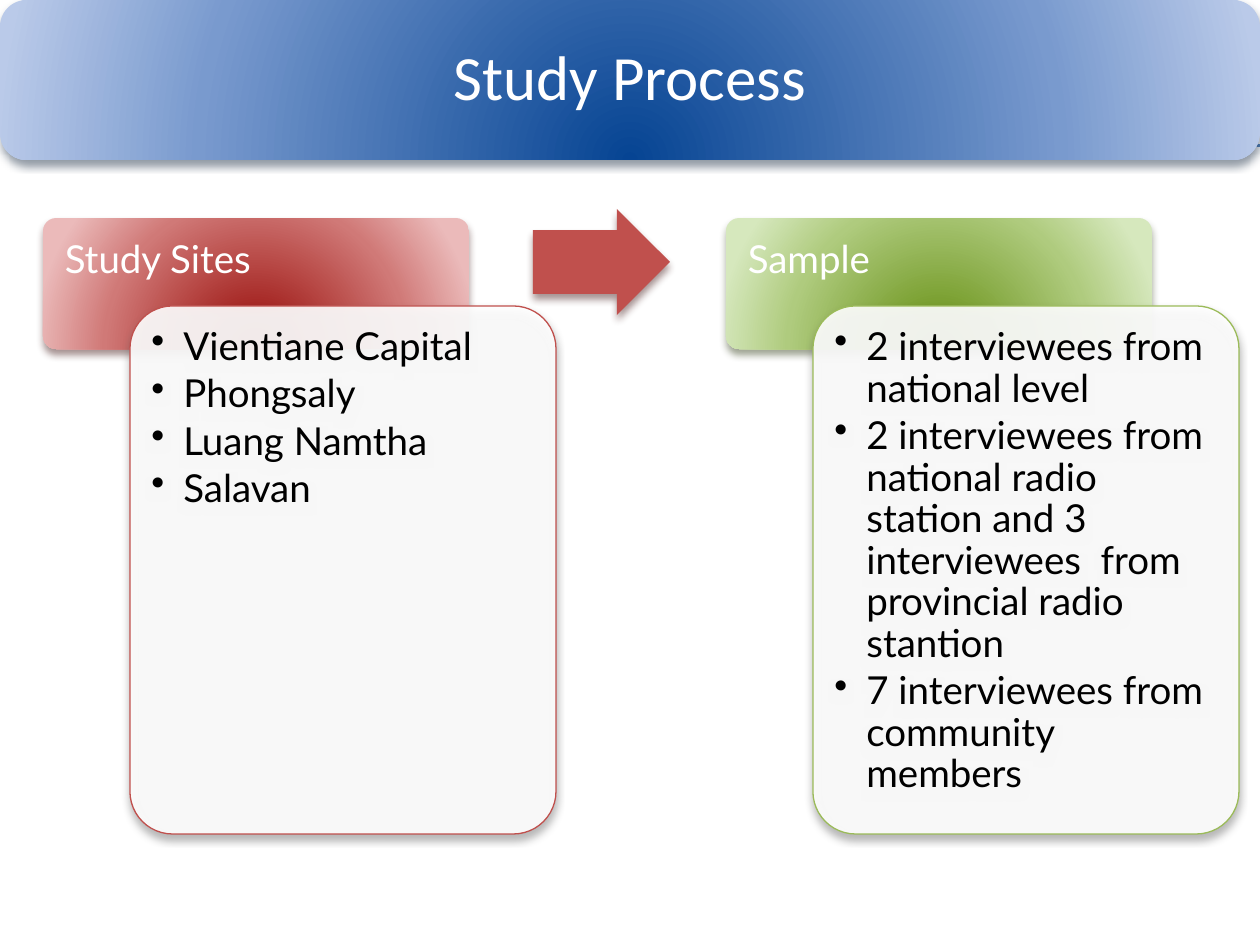
"""Builds the Study Process slide with its two linked panels."""
from lxml import etree
from pptx import Presentation
from pptx.dml.color import RGBColor
from pptx.enum.shapes import MSO_CONNECTOR, MSO_SHAPE
from pptx.enum.text import MSO_ANCHOR, PP_ALIGN
from pptx.oxml.ns import qn
from pptx.util import Emu, Pt

STRAIGHT = MSO_CONNECTOR.STRAIGHT
ROUNDED = MSO_SHAPE.ROUNDED_RECTANGLE
ARROW = MSO_SHAPE.RIGHT_ARROW
TOP, MIDDLE = MSO_ANCHOR.TOP, MSO_ANCHOR.MIDDLE
LEFT, CENTER = PP_ALIGN.LEFT, PP_ALIGN.CENTER

SCALE = 914400 / 126
WIDTH, HEIGHT = 1260, 945
BANNER_HEIGHT = 160
PANEL_LEFT, PANEL_STEP, PANEL_WIDTH = 43, 683, 426
LABEL_TOP, LABEL_HEIGHT = 218, 131
CARD_SHIFT, CARD_TOP, CARD_HEIGHT = 87, 306, 528

BANNER_STOPS = ("064493", "799ACE", "BACAE9")
PANELS = [
    ("Study Sites", ("960703", "D07977", "EBBABA"), "441B1A", "C0504D",
     ["Vientiane Capital", "Phongsaly", "Luang Namtha", "Salavan"]),
    ("Sample", ("638D0F", "AFCB7E", "D6E8BD"), "37421E", "9BBB59",
     ["2 interviewees from national level",
      "2 interviewees from national radio station and 3 interviewees  from provincial radio stantion",
      "7 interviewees from community members"]),
]


def px(length):
    """Turn pixels into EMU."""
    return Emu(round(length * SCALE))


def color(value):
    """Turn a hex string into a colour."""
    return RGBColor.from_string(value)


def add_node(parent, tag, **attributes):
    """Append a drawing element with the given attributes."""
    values = {name: str(value) for name, value in attributes.items()}
    return etree.SubElement(parent, qn(tag), values)


def assign(target, values):
    """Set each attribute named in a dict."""
    for name, value in values.items():
        setattr(target, name, value)


class SlidePainter:
    """Holds the text style and the current slide."""

    label_style = {"name": "Lato", "size": Pt(22)}
    title_style = {"name": "Calibri", "size": Pt(36)}

    def __init__(self, page):
        """Keep the slide to draw on."""
        self.page = page

    def rule(self, left, top, right, hex_value):
        """Draw a thin horizontal line."""
        line = self.page.shapes.add_connector(
            STRAIGHT, px(left), px(top), px(right), px(top))
        line.line.color.rgb = color(hex_value)
        line.line.width = Pt(0.75)
        add_node(line.element.spPr, "a:effectLst")

    def shape(self, kind, bounds, shadow, adjustments=()):
        """Add a borderless preset shape with a soft shadow below."""
        shape = self.page.shapes.add_shape(kind, *map(px, bounds))
        for index, value in enumerate(adjustments):
            shape.adjustments[index] = value
        shape.line.fill.background()
        shape.shadow.inherit = False
        effects = shape.element.spPr.find(qn("a:effectLst"))
        outer = add_node(effects, "a:outerShdw", blurRad=Pt(4.5), dist=Pt(3),
                         dir=5400000, rotWithShape=0)
        tint = add_node(outer, "a:srgbClr", val=shadow)
        add_node(tint, "a:alpha", val=48000)
        return shape

    def solid(self, shape, hex_value, opacity=100):
        """Fill a shape with one colour."""
        shape.fill.solid()
        shape.fill.fore_color.rgb = color(hex_value)
        if opacity < 100:
            tint = shape.element.spPr.find(qn("a:solidFill"))[0]
            add_node(tint, "a:alpha", val=opacity * 1000)

    def glow(self, shape, stops):
        """Fill a shape with a radial gradient centred below it."""
        shape.fill.gradient()
        gradient = shape.element.spPr.find(qn("a:gradFill"))
        for child in list(gradient):
            gradient.remove(child)
        stop_list = add_node(gradient, "a:gsLst")
        for position, hex_value in zip((0, 68000, 100000), stops):
            stop = add_node(stop_list, "a:gs", pos=position)
            add_node(stop, "a:srgbClr", val=hex_value)
        circle = add_node(gradient, "a:path", path="circle")
        add_node(circle, "a:fillToRect", l=50000, t=130000, r=50000, b=-30000)

    def text(self, shape, lines, style, hex_value, inset, anchor=TOP,
             align=LEFT, bullets=False):
        """Write paragraphs into a shape."""
        frame = shape.text_frame
        margins = dict(zip(("margin_left", "margin_top", "margin_right", "margin_bottom"),
                           map(px, inset)))
        assign(frame, {"word_wrap": True, "vertical_anchor": anchor, **margins})
        for index, line in enumerate(lines):
            para = frame.add_paragraph() if index else frame.paragraphs[0]
            assign(para, {"alignment": align, "line_spacing": 0.9,
                          "space_before": Pt(0), "space_after": Pt(3.3)})
            if bullets:
                properties = para._p.get_or_add_pPr()
                properties.set("marL", str(px(32)))
                properties.set("indent", str(px(-32)))
                add_node(properties, "a:buChar", char="•")
            span = para.add_run()
            span.text = line
            assign(span.font, style)
            span.font.color.rgb = color(hex_value)

    def title(self, words):
        """Place the title on a banner across the top."""
        bounds = (0, 0, WIDTH, BANNER_HEIGHT)
        banner = self.shape(ROUNDED, bounds, "1B2D43")
        self.glow(banner, BANNER_STOPS)
        title = self.page.shapes.title
        assign(title, dict(zip(("left", "top", "width", "height"), map(px, bounds))))
        self.text(title, [words], self.title_style, "FFFFFF", (19, 19, 19, 19),
                  MIDDLE, CENTER)
        banner.element.addnext(title.element)

    def panel(self, left, heading, stops, shadow, accent, items):
        """Draw a heading with an overlapping card of bullets."""
        label = self.shape(ROUNDED, (left, LABEL_TOP, PANEL_WIDTH, LABEL_HEIGHT),
                           shadow, [0.1])
        self.glow(label, stops)
        self.text(label, [heading], self.label_style, "FFFFFF", (18, 18, 18, 7))
        card = self.shape(
            ROUNDED, (left + CARD_SHIFT, CARD_TOP, PANEL_WIDTH, CARD_HEIGHT),
            "5A5A5A", [0.1])
        self.solid(card, "FFFFFF", 90)
        card.line.color.rgb = color(accent)
        card.line.width = Pt(0.75)
        self.text(card, items, self.label_style, "000000", (9, 9, 9, 9), bullets=True)

    def arrow(self, bounds, hex_value, shadow):
        """Draw a block arrow pointing right."""
        self.solid(self.shape(ARROW, bounds, shadow, [0.6, 0.5]), hex_value)


def main():
    """Build and save the deck."""
    deck = Presentation()
    deck.slide_width, deck.slide_height = px(WIDTH), px(HEIGHT)
    painter = SlidePainter(deck.slides.add_slide(deck.slide_layouts[5]))
    for top in (145, 146):
        painter.rule(71, top, WIDTH, "4F81BD")
    painter.title("Study Process")
    for index, panel in enumerate(PANELS):
        painter.panel(PANEL_LEFT + index * PANEL_STEP, *panel)
    painter.arrow((533, 209, 137, 106), "C0504D", "441B1A")
    deck.save("out.pptx")


if __name__ == "__main__":
    main()
